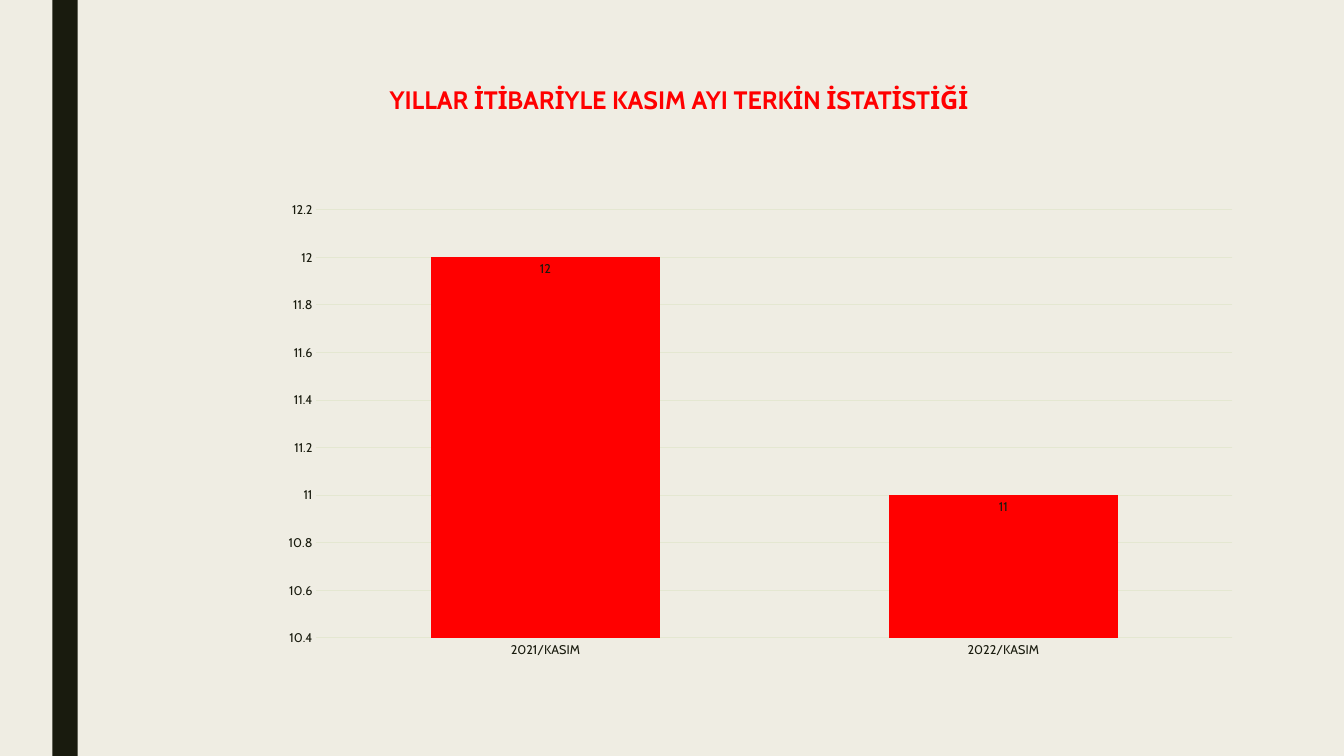
from pptx import Presentation
from pptx.chart.data import CategoryChartData
from pptx.dml.color import RGBColor
from pptx.enum.chart import XL_CHART_TYPE, XL_LABEL_POSITION, XL_TICK_MARK
from pptx.enum.shapes import MSO_SHAPE
from pptx.enum.text import MSO_ANCHOR, PP_ALIGN
from pptx.util import Cm, Pt

FONT = "Cabin"
BACKGROUND = "EFEDE3"
DARK = "191B0E"
GRID = "E4E7D1"
RED = "FF0000"


def color(value):
    return RGBColor.from_string(value)


def style_font(font, size, value, bold=False):
    font.name = FONT
    font.size = Pt(size)
    font.bold = bold
    font.color.rgb = color(value)


def style_line(line, value):
    line.color.rgb = color(value)
    line.width = Pt(0.75)


def set_background(slide):
    fill = slide.background.fill
    fill.solid()
    fill.fore_color.rgb = color(BACKGROUND)


def add_side_bar(slide, height):
    bar = slide.shapes.add_shape(MSO_SHAPE.RECTANGLE, Cm(1.32), 0, Cm(0.64), height)
    bar.shadow.inherit = False
    bar.fill.solid()
    bar.fill.fore_color.rgb = color(DARK)
    bar.line.fill.background()


def add_title(slide, text):
    title = slide.shapes.add_textbox(Cm(9.35), Cm(2.08), Cm(15.52), Cm(0.97))
    frame = title.text_frame
    frame.word_wrap = True
    frame.vertical_anchor = MSO_ANCHOR.MIDDLE
    frame.margin_top = frame.margin_bottom = 0
    frame.text = text
    paragraph = frame.paragraphs[0]
    paragraph.alignment = PP_ALIGN.CENTER
    paragraph.line_spacing = 0.89
    style_font(paragraph.runs[0].font, 18, RED, bold=True)


def style_axis(axis):
    axis.major_tick_mark = XL_TICK_MARK.NONE
    axis.minor_tick_mark = XL_TICK_MARK.NONE
    style_font(axis.tick_labels.font, 9, DARK)


def add_column_chart(slide, categories, values):
    data = CategoryChartData()
    data.categories = categories
    data.add_series("Series 1", values)
    chart = slide.shapes.add_chart(
        XL_CHART_TYPE.COLUMN_CLUSTERED, Cm(6.78), Cm(4.85), Cm(24.77), Cm(11.96), data
    ).chart
    chart.has_title = False
    chart.has_legend = False
    style_font(chart.font, 10, "000000")

    style_axis(chart.category_axis)
    style_line(chart.category_axis.format.line, GRID)
    value_axis = chart.value_axis
    style_axis(value_axis)
    value_axis.minimum_scale = 10.4
    value_axis.maximum_scale = 12.2
    value_axis.major_unit = 0.2
    value_axis.format.line.fill.background()
    style_line(value_axis.major_gridlines.format.line, GRID)

    plot = chart.plots[0]
    plot.gap_width = 100
    plot.overlap = -24
    plot.vary_by_categories = False
    series = plot.series[0]
    series.format.fill.solid()
    series.format.fill.fore_color.rgb = color(RED)
    labels = series.data_labels
    labels.show_value = True
    labels.position = XL_LABEL_POSITION.INSIDE_END
    style_font(labels.font, 9, DARK)


def main():
    presentation = Presentation()
    presentation.slide_width = Cm(33.87)
    presentation.slide_height = Cm(19.05)
    slide = presentation.slides.add_slide(presentation.slide_layouts[6])
    set_background(slide)
    add_side_bar(slide, presentation.slide_height)
    add_title(slide, "YILLAR İTİBARİYLE KASIM AYI TERKİN İSTATİSTİĞİ")
    add_column_chart(slide, ["2021/KASIM", "2022/KASIM"], [12, 11])
    presentation.save("out.pptx")


if __name__ == "__main__":
    main()
